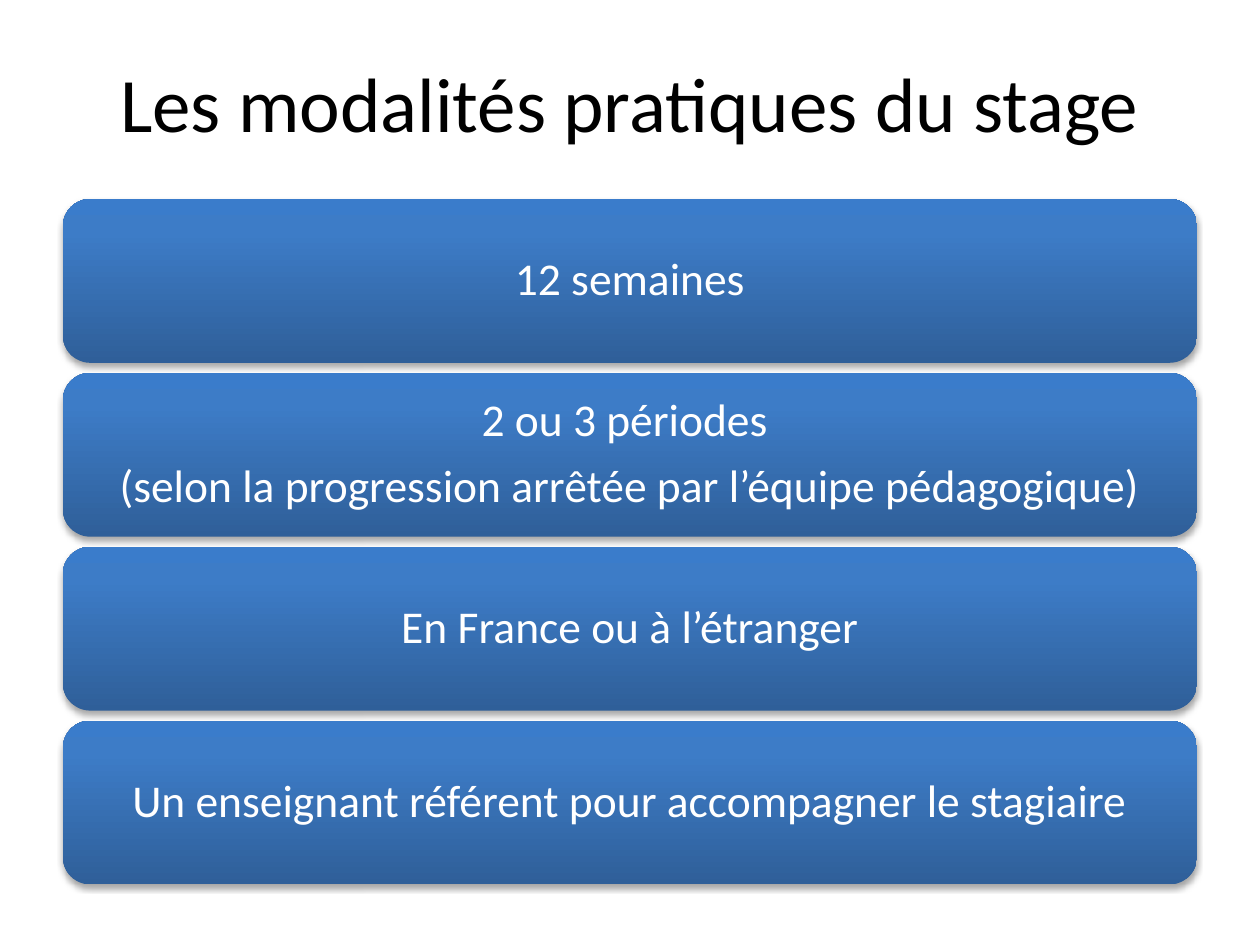
from dataclasses import dataclass

from lxml.etree import SubElement
from pptx import Presentation
from pptx.dml.color import RGBColor
from pptx.enum.shapes import MSO_SHAPE
from pptx.enum.text import MSO_ANCHOR, PP_ALIGN
from pptx.oxml.ns import qn
from pptx.shapes.autoshape import Shape
from pptx.slide import Slide
from pptx.util import Inches, Pt


@dataclass(frozen=True)
class Theme:
    font: str = "Calibri"
    title_size: float = 44
    card_size: float = 26
    title_color: str = "000000"
    card_color: str = "FFFFFF"
    shadow_color: str = "000000"
    # Gradient stops (percent, colour), from bottom to top
    gradient: tuple = ((0, "2F5F99"), (80, "3D7CC7"), (100, "3A7CCB"))


@dataclass(frozen=True)
class Card:
    lines: tuple[str, ...]


THEME = Theme()
WIDTH, HEIGHT = 10, 7.5
MARGIN = WIDTH * 0.05
CONTENT_WIDTH = WIDTH - 2 * MARGIN
TITLE_TOP, TITLE_HEIGHT = HEIGHT * 0.04, 1.01
FIRST_ROW, ROW_PITCH, CARD_HEIGHT = 1.58, 1.38, 1.3
CARD_INSET = 0.11

TITLE = "Les modalités pratiques du stage"
CARDS = (
    Card(("12 semaines",)),
    Card(("2 ou 3 périodes ", "(selon la progression arrêtée par l’équipe pédagogique)")),
    Card(("En France ou à l’étranger",)),
    Card(("Un enseignant référent pour accompagner le stagiaire",)),
)


def write_lines(box: Shape, lines: tuple[str, ...], size: float, color: str,
                line_spacing: float = 1.0, space_share: float = 0) -> None:
    """Write centred paragraphs; the space after is a share of the type size."""
    frame = box.text_frame
    frame.word_wrap = True
    frame.vertical_anchor = MSO_ANCHOR.MIDDLE
    for index, line in enumerate(lines):
        para = frame.paragraphs[0] if index == 0 else frame.add_paragraph()
        para.alignment = PP_ALIGN.CENTER
        para.line_spacing = line_spacing
        para.space_after = Pt(size * space_share)
        span = para.add_run()
        span.text = line
        span.font.name = THEME.font
        span.font.size = Pt(size)
        span.font.color.rgb = RGBColor.from_string(color)


def paint_gradient(box: Shape) -> None:
    box.fill.gradient()
    box.fill.gradient_angle = 90
    stops = box.element.spPr.find(qn("a:gradFill")).find(qn("a:gsLst"))
    stops.clear()
    for percent, color in THEME.gradient:
        stop = SubElement(stops, qn("a:gs"), pos=str(percent * 1000))
        SubElement(stop, qn("a:srgbClr"), val=color)


def cast_shadow(box: Shape) -> None:
    box.shadow.inherit = False
    effects = box.element.spPr.find(qn("a:effectLst"))
    shadow = SubElement(effects, qn("a:outerShdw"), blurRad=str(Pt(3.1)),
                        dist=str(Pt(1.8)), dir="5400000", rotWithShape="0")
    color = SubElement(shadow, qn("a:srgbClr"), val=THEME.shadow_color)
    SubElement(color, qn("a:alpha"), val="35000")


def draw_title(page: Slide, text: str) -> None:
    box = page.shapes.add_textbox(Inches(MARGIN), Inches(TITLE_TOP),
                                  Inches(CONTENT_WIDTH), Inches(TITLE_HEIGHT))
    write_lines(box, (text,), THEME.title_size, THEME.title_color)


def draw_card(page: Slide, card: Card, row: int) -> None:
    box = page.shapes.add_shape(
        MSO_SHAPE.ROUNDED_RECTANGLE, Inches(MARGIN), Inches(FIRST_ROW + row * ROW_PITCH),
        Inches(CONTENT_WIDTH), Inches(CARD_HEIGHT))
    paint_gradient(box)
    box.line.fill.background()
    cast_shadow(box)
    frame = box.text_frame
    frame.margin_left = frame.margin_right = Inches(CARD_INSET)
    frame.margin_top = frame.margin_bottom = Inches(CARD_INSET)
    write_lines(box, card.lines, THEME.card_size, THEME.card_color,
                line_spacing=0.9, space_share=0.35)


def main() -> None:
    deck = Presentation()
    deck.slide_width, deck.slide_height = Inches(WIDTH), Inches(HEIGHT)
    page = deck.slides.add_slide(deck.slide_layouts[6])

    # Heading
    draw_title(page, TITLE)

    # Stacked cards
    for row, card in enumerate(CARDS):
        draw_card(page, card, row)

    deck.save("out.pptx")


if __name__ == "__main__":
    main()
